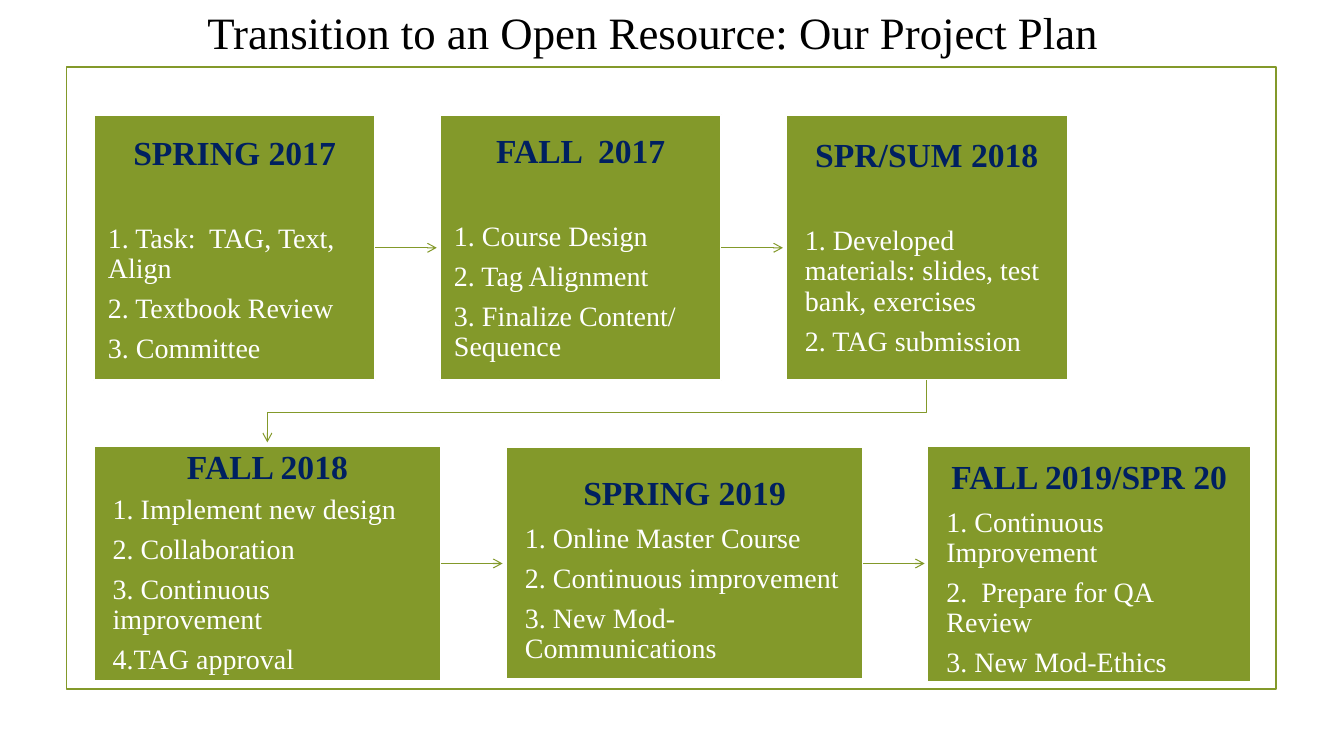
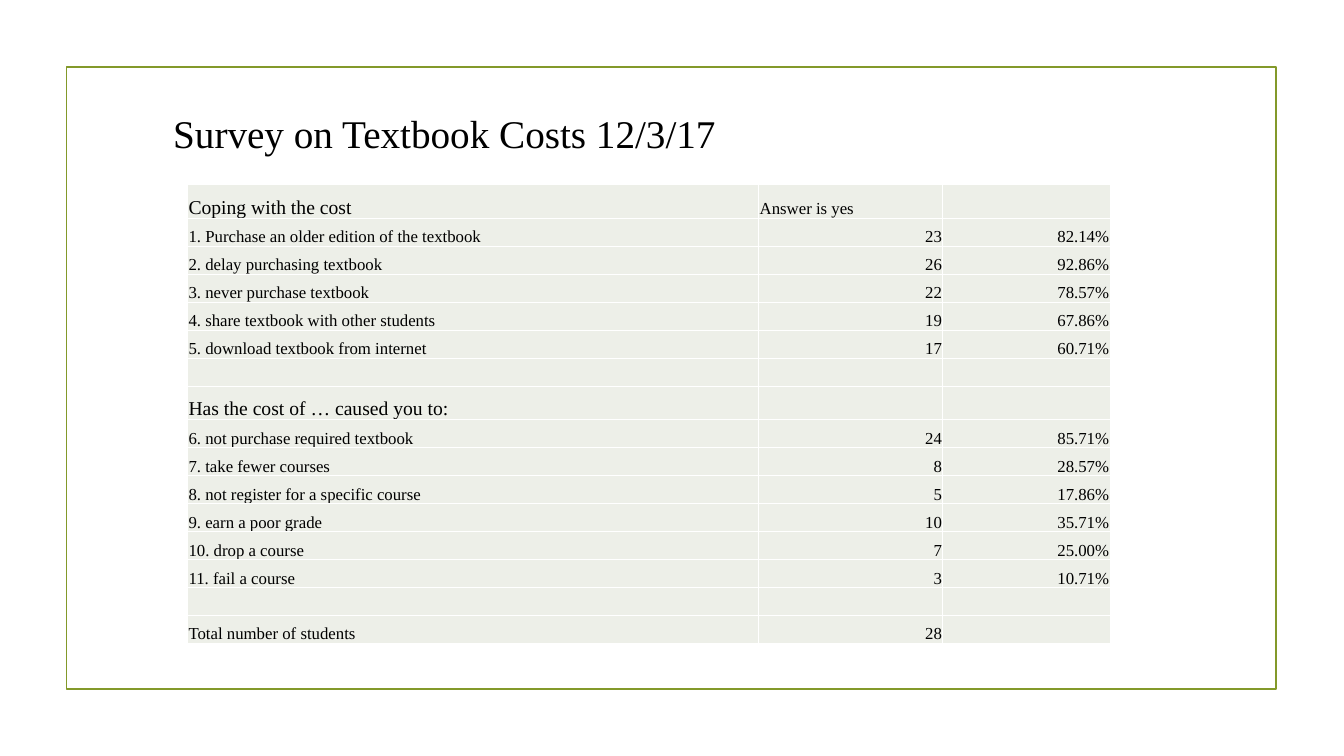
from lxml import etree
from pptx import Presentation
from pptx.dml.color import RGBColor
from pptx.enum.shapes import MSO_CONNECTOR, MSO_SHAPE
from pptx.enum.text import MSO_ANCHOR, PP_ALIGN
from pptx.oxml.ns import qn
from pptx.util import Pt

RECTANGLE = MSO_SHAPE.RECTANGLE
STRAIGHT = MSO_CONNECTOR.STRAIGHT
LEFT, CENTER, RIGHT = PP_ALIGN.LEFT, PP_ALIGN.CENTER, PP_ALIGN.RIGHT
TOP, BOTTOM = MSO_ANCHOR.TOP, MSO_ANCHOR.BOTTOM

# Shared look
FONT = "Times New Roman"
OLIVE, NAVY, WHITE, BLACK, PALE = "83992A", "002060", "FFFFFF", "000000", "EDEFE8"
FRAME = (47.5, 48, 864, 444)

# Project plan: heading, steps, side inset, top inset, gap under heading
CARD_LEFT, CARD_TOP, CARD_WIDTH, CARD_HEIGHT, CARD_PITCH = 67, 82, 201, 189.5, 247.25
ARROW_LENGTH = 44
FIRST_ROW = [
    ("SPRING 2017", ["1. Task:  TAG, Text, Align", "2. Textbook Review", "3. Committee"],
     10, 15, 37),
    ("FALL  2017", ["1. Course Design", "2. Tag Alignment", "3. Finalize Content/ Sequence"],
     10, 13.5, 37),
    ("SPR/SUM 2018", ["1. Developed materials: slides, test bank, exercises",
                      "2. TAG submission"], 13.5, 16.5, 37),
]
SECOND_ROW = [
    ("FALL 2018", ["1. Implement new design", "2. Collaboration",
                   "3. Continuous improvement", "4.TAG approval"], 13.5, 3, 6),
    ("SPRING 2019", ["1. Online Master Course", "2. Continuous improvement",
                     "3. New Mod-Communications"], 13.5, 20.5, 8),
    ("FALL 2019/SPR 20", ["1. Continuous Improvement", "2.  Prepare for QA Review",
                          "3. New Mod-Ethics"], 13.5, 10, 8),
]
SECOND_ROW_BOXES = [(67, 318.5, 248, 168), (361.5, 319.5, 255, 165.5),
                    (662.5, 318.5, 231, 168.5)]

# Survey answers
COLUMN_WIDTHS = (408, 131.5, 119.5)
SECTION_HEADS = ("Coping with the cost", "Has the cost of … caused you to:")
SURVEY = [
    (SECTION_HEADS[0], "Answer is yes", ""),
    ("1. Purchase an older edition of the textbook", "23", "82.14%"),
    ("2. delay purchasing textbook", "26", "92.86%"),
    ("3. never purchase textbook", "22", "78.57%"),
    ("4. share textbook with other students", "19", "67.86%"),
    ("5. download textbook from internet", "17", "60.71%"),
    ("", "", ""),
    (SECTION_HEADS[1], "", ""),
    ("6. not purchase required textbook", "24", "85.71%"),
    ("7. take fewer courses", "8", "28.57%"),
    ("8. not register for a specific course", "5", "17.86%"),
    ("9. earn a poor grade", "10", "35.71%"),
    ("10. drop a course", "7", "25.00%"),
    ("11. fail a course", "3", "10.71%"),
    ("", "", ""),
    ("Total number of students", "28", ""),
]


def points(values):
    return [Pt(value) for value in values]


def paint(color_format, hex_color):
    color_format.rgb = RGBColor.from_string(hex_color)


def fill_with(owner, hex_color):
    owner.fill.solid()
    paint(owner.fill.fore_color, hex_color)


def outline(shape, hex_color, width):
    paint(shape.line.color, hex_color)
    shape.line.width = Pt(width)


def add_run(paragraph, text, size, color, bold=False):
    run = paragraph.add_run()
    run.text = text
    run.font.name = FONT
    run.font.size = Pt(size)
    run.font.bold = bold
    paint(run.font.color, color)


def set_insets(owner, left, top, right, bottom):
    owner.margin_left, owner.margin_top = Pt(left), Pt(top)
    owner.margin_right, owner.margin_bottom = Pt(right), Pt(bottom)


def add_rectangle(slide, box, line_width, line_color, fill_color=None):
    rectangle = slide.shapes.add_shape(RECTANGLE, *points(box))
    rectangle.shadow.inherit = False
    outline(rectangle, line_color, line_width)
    if fill_color:
        fill_with(rectangle, fill_color)
    else:
        rectangle.fill.background()
    return rectangle


def add_frame_to_layout(layout, slide):
    """Draw the olive frame and move it to the layout, so every slide shows it."""
    frame = add_rectangle(slide, FRAME, 1.25, OLIVE).element
    frame.xpath(".//p:cNvPr")[0].set("id", "20")
    layout.shapes.element.append(frame)


def set_title(slide, text, box, size, align):
    title = slide.shapes.title
    title.left, title.top, title.width, title.height = points(box)
    text_frame = title.text_frame
    text_frame.word_wrap = True
    text_frame.vertical_anchor = TOP
    set_insets(text_frame, 7.2, 3.6, 7.2, 3.6)
    text_frame.paragraphs[0].alignment = align
    add_run(text_frame.paragraphs[0], text, size, BLACK)


def add_card(slide, box, heading, steps, side, top, heading_gap):
    text_frame = add_rectangle(slide, box, 1.25, WHITE, OLIVE).text_frame
    text_frame.word_wrap = True
    text_frame.vertical_anchor = TOP
    set_insets(text_frame, side, top, side, 0)
    headline = text_frame.paragraphs[0]
    headline.alignment = CENTER
    headline.line_spacing = Pt(26)
    headline.space_after = Pt(heading_gap)
    add_run(headline, heading, 24, NAVY, bold=True)
    for step in steps:
        paragraph = text_frame.add_paragraph()
        paragraph.alignment = LEFT
        paragraph.line_spacing = Pt(21.6)
        paragraph.space_after = Pt(7)
        add_run(paragraph, step, 20, WHITE)


def style_arrow(arrow):
    outline(arrow, OLIVE, 0.75)
    line = arrow.element.xpath(".//a:ln")[0]
    etree.SubElement(line, qn("a:tailEnd"), type="arrow")


def add_arrow(slide, left, y):
    arrow = slide.shapes.add_connector(STRAIGHT, *points((left, y, left + ARROW_LENGTH, y)))
    style_arrow(arrow)
    etree.SubElement(arrow.element.spPr, qn("a:effectLst"))


def add_elbow_arrow(slide, corners):
    start, *others = [points(corner) for corner in corners]
    builder = slide.shapes.build_freeform(*start)
    builder.add_line_segments(others, close=False)
    elbow = builder.convert_to_shape()
    elbow.shadow.inherit = False
    elbow.fill.background()
    style_arrow(elbow)


def add_card_row(slide, boxes, cards, arrow_y):
    for box, card in zip(boxes, cards):
        add_card(slide, box, *card)
    for left, _, width, _ in boxes[:-1]:
        add_arrow(slide, left + width, arrow_y)


def add_borders(cell_properties):
    for position, side in enumerate(("a:lnL", "a:lnR", "a:lnT", "a:lnB")):
        border = etree.Element(qn(side), w=str(Pt(1)))
        fill = etree.SubElement(border, qn("a:solidFill"))
        etree.SubElement(fill, qn("a:srgbClr"), val=WHITE)
        cell_properties.insert(position, border)


def fill_cell(cell, text, size, align):
    fill_with(cell, PALE)
    cell.vertical_anchor = BOTTOM
    set_insets(cell, 0.7, 0.7, 0.7, 0)
    paragraph = cell.text_frame.paragraphs[0]
    paragraph.alignment = align
    if text:
        add_run(paragraph, text, size, BLACK)


def add_survey_table(slide, left, top):
    holder = slide.shapes.add_table(len(SURVEY), len(COLUMN_WIDTHS), Pt(left), Pt(top),
                                    Pt(sum(COLUMN_WIDTHS)), Pt(20 * len(SURVEY)))
    table = holder.table
    table.first_row = table.horz_banding = False
    for column, width in zip(table.columns, COLUMN_WIDTHS):
        column.width = Pt(width)
    for row, answers in zip(table.rows, SURVEY):
        row.height = Pt(24 if answers[0] in SECTION_HEADS else 20)
        for cell, text in zip(row.cells, answers):
            is_number = text.rstrip("%").replace(".", "").isdigit()
            fill_cell(cell, text, 14 if text in SECTION_HEADS else 12,
                      RIGHT if is_number else LEFT)
    for cell_properties in holder.element.xpath(".//a:tcPr"):
        add_borders(cell_properties)
    # Small type in empty cells keeps their rows low
    for paragraph in holder.element.xpath(".//a:p[not(a:r)]"):
        etree.SubElement(paragraph, qn("a:endParaRPr"), sz="1200")


def build_plan(slide):
    set_title(slide, "Transition to an Open Resource: Our Project Plan",
              (43, 0, 847, 46), 32, CENTER)
    first_boxes = [(CARD_LEFT + i * CARD_PITCH, CARD_TOP, CARD_WIDTH, CARD_HEIGHT)
                   for i in range(len(FIRST_ROW))]
    add_card_row(slide, first_boxes, FIRST_ROW, 177)
    add_card_row(slide, SECOND_ROW_BOXES, SECOND_ROW, 402.5)

    # Link from the end of the first row to the start of the second
    start_x = first_boxes[-1][0] + CARD_WIDTH / 2
    end_x = SECOND_ROW_BOXES[0][0] + SECOND_ROW_BOXES[0][2] / 2
    add_elbow_arrow(slide, [(start_x, CARD_TOP + CARD_HEIGHT), (start_x, 295),
                            (end_x, 295), (end_x, 316)])


def build_survey(slide):
    set_title(slide, "Survey on Textbook Costs 12/3/17", (116.5, 74.5, 420, 41), 28, LEFT)
    add_survey_table(slide, 134, 132)


def main():
    deck = Presentation()
    deck.slide_width, deck.slide_height = Pt(960), Pt(540)
    layout = deck.slide_layouts[5]
    plan = deck.slides.add_slide(layout)
    add_frame_to_layout(layout, plan)
    build_plan(plan)
    build_survey(deck.slides.add_slide(layout))
    deck.save("out.pptx")


if __name__ == "__main__":
    main()
